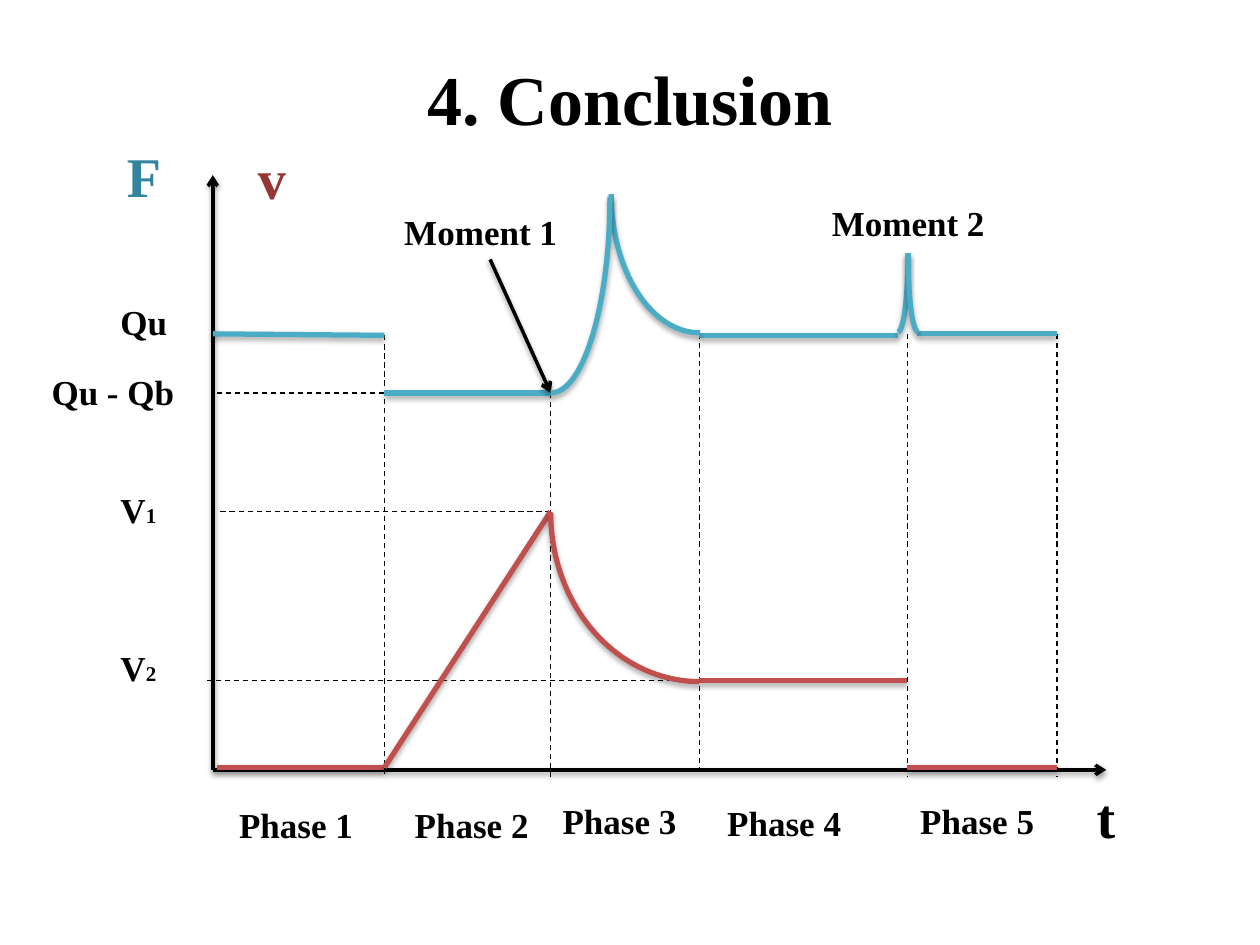
import lxml.etree
import pptx
import pptx.dml.color
import pptx.enum.dml
import pptx.enum.shapes
import pptx.enum.text
import pptx.oxml
import pptx.oxml.ns
import pptx.util
from pptx.util import Cm

COLORS = {
    "black": "000000",
    "force": "4BACC6",
    "force_label": "31859C",
    "speed": "C0504D",
    "speed_label": "953735",
}
FONT = "Times New Roman"
LEFT = pptx.enum.text.PP_ALIGN.LEFT
CENTER = pptx.enum.text.PP_ALIGN.CENTER


def style_line(shape, color, width, shadow=None, dashed=False, arrow=False):
    """Format an outline; shadow is (distance in EMU, opacity in percent)."""
    shape.line.color.rgb = pptx.dml.color.RGBColor.from_string(COLORS[color])
    shape.line.width = pptx.util.Pt(width)
    if dashed:
        shape.line.dash_style = pptx.enum.dml.MSO_LINE.DASH
    properties = shape.element.spPr
    if arrow:
        outline = properties.find(pptx.oxml.ns.qn("a:ln"))
        lxml.etree.SubElement(outline, pptx.oxml.ns.qn("a:tailEnd"), type="arrow")
    effect = ""
    if shadow:
        distance, opacity = shadow
        effect = (
            f'<a:outerShdw blurRad="40000" dist="{distance}" dir="5400000" rotWithShape="0">'
            f'<a:srgbClr val="{COLORS["black"]}"><a:alpha val="{opacity * 1000}"/></a:srgbClr>'
            "</a:outerShdw>"
        )
    properties.append(pptx.oxml.parse_xml(
        f'<a:effectLst {pptx.oxml.ns.nsdecls("a")}>{effect}</a:effectLst>'))


def style_text(paragraph, size, color, alignment):
    paragraph.alignment = alignment
    paragraph.font.name = FONT
    paragraph.font.size = pptx.util.Pt(size)
    paragraph.font.bold = True
    paragraph.font.color.rgb = pptx.dml.color.RGBColor.from_string(COLORS[color])


presentation = pptx.Presentation()
presentation.slide_width = Cm(25.4)
presentation.slide_height = Cm(19.05)
slide = presentation.slides.add_slide(presentation.slide_layouts[5])

title = slide.shapes.title
title.left, title.top, title.width, title.height = Cm(0), Cm(0.99), Cm(25.4), Cm(1.96)
title.text_frame.text = "4. Conclusion"
style_text(title.text_frame.paragraphs[0], 40, "black", CENTER)

# Phase boundaries on the time axis and levels on the vertical axis, in cm
start, end_1, end_2, end_3, end_4, end_5 = 4.29, 7.75, 11.1, 14.1, 18.29, 21.31
qu, qu_qb, v1, v2, zero, axis = 6.73, 7.92, 10.31, 13.72, 15.47, 15.52

AXIS = dict(color="black", width=2, shadow=(20000, 38), arrow=True)
GUIDE = dict(color="black", width=0.75, dashed=True)
FORCE = dict(color="force", width=3, shadow=(23000, 35))
SPEED = dict(color="speed", width=3, shadow=(23000, 35))

lines = [
    (start, axis, 22.3, axis, AXIS),
    (start, axis, start, 3.53, AXIS),
    (end_1, 6.76, end_1, 15.67, GUIDE),
    (end_2, 15.67, end_2, qu_qb, GUIDE),
    (end_3, qu, end_3, zero, GUIDE),
    (end_4, qu, end_4, 15.65, GUIDE),
    (end_5, qu, end_5, 15.65, GUIDE),
    (end_1, qu_qb, 4.37, qu_qb, GUIDE),
    (end_2, v1, 4.37, v1, GUIDE),
    (end_3, v2, 4.17, v2, GUIDE),
    (start, qu, end_1, 6.76, FORCE),
    (end_1, qu_qb, end_2, qu_qb, FORCE),
    (end_3, 6.76, 18.11, 6.76, FORCE),
    (18.49, qu, end_5, qu, FORCE),
    (4.37, zero, end_1, zero, SPEED),
    (end_1, zero, end_2, v1, SPEED),
    (end_3, v2, end_4, v2, SPEED),
    (end_4, zero, end_5, zero, SPEED),
    (9.88, 5.23, end_2, qu_qb, AXIS),
]
for x1, y1, x2, y2, style in lines:
    line = slide.shapes.add_connector(
        pptx.enum.shapes.MSO_CONNECTOR.STRAIGHT, Cm(x1), Cm(y1), Cm(x2), Cm(y2))
    style_line(line, **style)

arcs = [
    (12.32, 1.12, 3.58, 5.59, 180, False, FORCE),
    (11.1, 6.93, 5.99, 6.81, 180, False, SPEED),
    (7.14, 2.77, 7.92, 2.39, 90, False, FORCE),
    (16.51, 4.9, 3.18, 0.41, 90, False, FORCE),
    (16.92, 4.9, 3.18, 0.41, 270, True, FORCE),
]
for left, top, width, height, rotation, flipped, style in arcs:
    arc = slide.shapes.add_shape(
        pptx.enum.shapes.MSO_SHAPE.ARC, Cm(left), Cm(top), Cm(width), Cm(height))
    arc.rotation = rotation
    if flipped:
        arc.element.spPr.xfrm.set("flipH", "1")
    arc.fill.background()
    style_line(arc, **style)

# Text, subscript, left, top, width, size, color, alignment
labels = [
    ("F", "", 2.31, 2.72, 1.6, 32, "force_label", LEFT),
    ("v", "", 4.95, 2.77, 1.4, 32, "speed_label", LEFT),
    ("t", "", 21.29, 15.65, 2.01, 32, "black", CENTER),
    ("Qu", "", 2.18, 5.94, 1.78, 20, "black", LEFT),
    ("Qu - Qb", "", 0.79, 7.34, 3.58, 20, "black", LEFT),
    ("V", "1", 2.18, 9.73, 1.78, 20, "black", LEFT),
    ("V", "2", 2.18, 12.9, 1.78, 20, "black", LEFT),
    ("Moment 1", "", 7.9, 4.11, 3.96, 20, "black", LEFT),
    ("Moment 2", "", 16.33, 3.94, 3.96, 20, "black", CENTER),
    ("Phase 1", "", 4.57, 16.08, 3.18, 20, "black", LEFT),
    ("Phase 2", "", 7.92, 16.08, 3.18, 20, "black", CENTER),
    ("Phase 3", "", 10.9, 16, 3.18, 20, "black", CENTER),
    ("Phase 4", "", 14.22, 16.03, 3.18, 20, "black", CENTER),
    ("Phase 5", "", 18.11, 16, 3.18, 20, "black", CENTER),
]
for text, subscript, left, top, width, size, color, alignment in labels:
    height = 1.63 if size == 32 else 1.12
    label = slide.shapes.add_textbox(Cm(left), Cm(top), Cm(width), Cm(height))
    label.text_frame.word_wrap = True
    label.text_frame.auto_size = pptx.enum.text.MSO_AUTO_SIZE.SHAPE_TO_FIT_TEXT
    paragraph = label.text_frame.paragraphs[0]
    paragraph.add_run().text = text
    if subscript:
        run = paragraph.add_run()
        run.text = subscript
        run.font.size = pptx.util.Pt(12)
    style_text(paragraph, size, color, alignment)

presentation.save("out.pptx")
